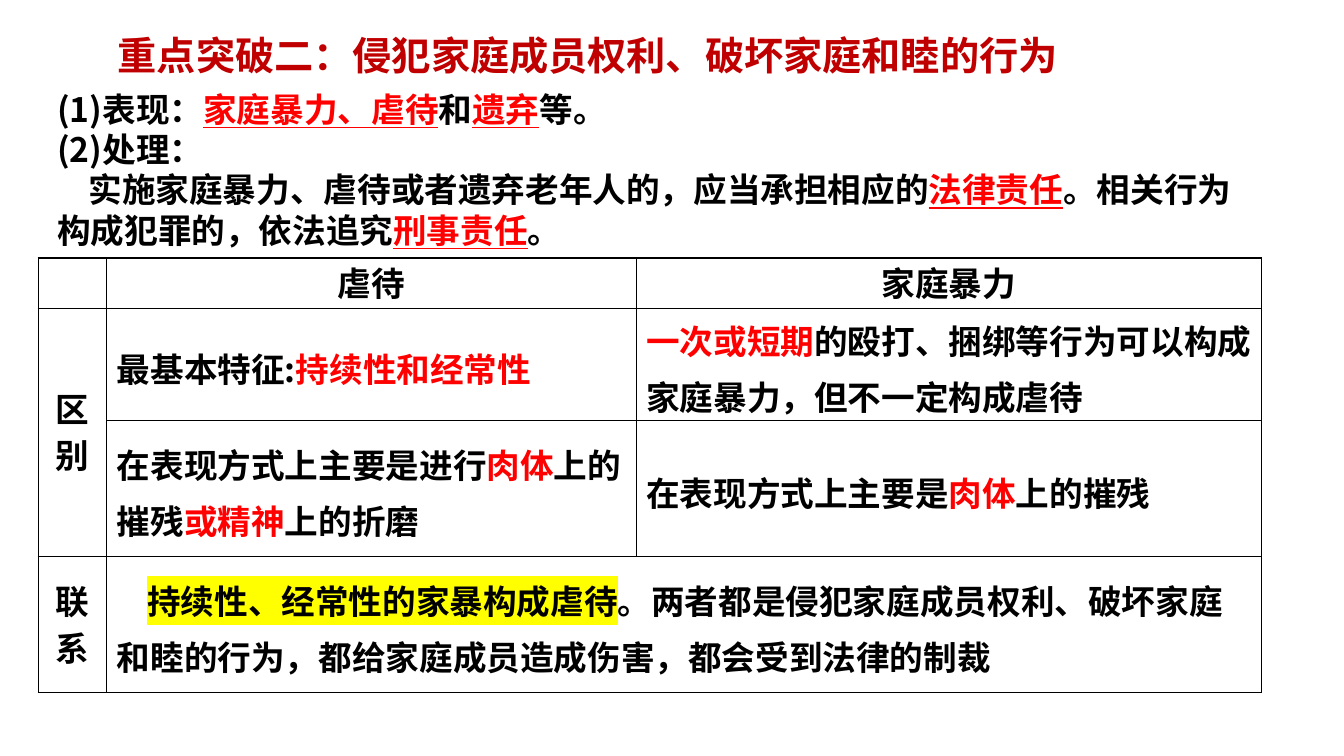
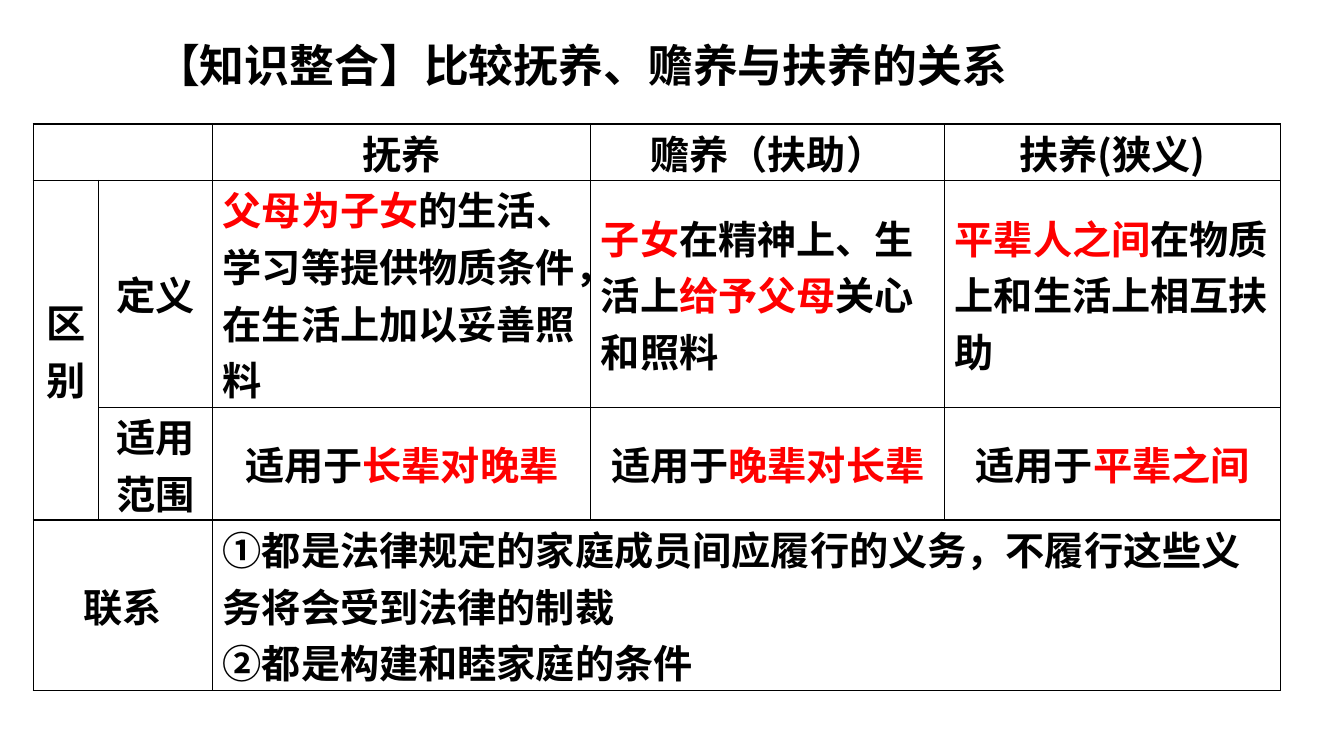
from collections import namedtuple

import pptx
import pptx.dml.color
import pptx.enum.text
import pptx.oxml
import pptx.oxml.ns
import pptx.util

# Shared look
BLACK = pptx.dml.color.RGBColor(0x00, 0x00, 0x00)
WHITE = pptx.dml.color.RGBColor(0xFF, 0xFF, 0xFF)
RED = pptx.dml.color.RGBColor(0xFF, 0x00, 0x00)
DARK_RED = pptx.dml.color.RGBColor(0xC0, 0x00, 0x00)
YELLOW = pptx.dml.color.RGBColor(0xFF, 0xFF, 0x00)
FONT = "Noto Sans CJK SC"
EMU_PER_PX = 9144  # 100 px to the inch
BORDER_PT = 1
LINE_FACTOR = 1.2

LEFT = pptx.enum.text.PP_ALIGN.LEFT
CENTER = pptx.enum.text.PP_ALIGN.CENTER
MIDDLE = pptx.enum.text.MSO_ANCHOR.MIDDLE
TOP = pptx.enum.text.MSO_ANCHOR.TOP

Box = namedtuple("Box", "left top width height")
Span = namedtuple("Span", "text color underline highlight",
                  defaults=(BLACK, False, None))
# spacing in points; margin and indent in px
Layout = namedtuple("Layout", "align spacing margin indent anchor",
                    defaults=(LEFT, None, 0, 0, MIDDLE))
Entry = namedtuple("Entry", "row column layout paragraphs")


def px(length):
    return pptx.util.Emu(length * EMU_PER_PX)


def red(text):
    return Span(text, RED)


def key(text):
    return Span(text, RED, underline=True)


def draw_xml(tag, content):
    return pptx.oxml.parse_xml(
        f'<a:{tag} {pptx.oxml.ns.nsdecls("a")}>{content}</a:{tag}>')


# Text
def write_span(para, span, size):
    run = para.add_run()
    run.text = span.text
    font = run.font
    font.size = pptx.util.Pt(size)
    font.bold = True
    font.underline = span.underline
    font.color.rgb = span.color
    font.name = FONT
    properties = run._r.get_or_add_rPr()
    east_asian = draw_xml("ea", "")
    east_asian.set("typeface", FONT)
    properties.find(pptx.oxml.ns.qn("a:latin")).addnext(east_asian)
    if span.highlight is not None:
        mark = draw_xml("highlight", f'<a:srgbClr val="{span.highlight}"/>')
        properties.find(pptx.oxml.ns.qn("a:solidFill")).addnext(mark)


def write_paragraph(para, spans, size, layout):
    para.alignment = layout.align
    if layout.spacing:
        para.line_spacing = pptx.util.Pt(layout.spacing)
    properties = para._p.get_or_add_pPr()
    properties.set("marL", str(px(layout.margin)))
    properties.set("indent", str(px(layout.indent)))
    for span in spans:
        write_span(para, Span(span) if isinstance(span, str) else span, size)


def add_text(page, box, size, paragraphs, anchor=TOP):
    """paragraphs holds pairs of first-line indent and spans."""
    frame = page.shapes.add_textbox(*map(px, box)).text_frame
    frame.word_wrap = True
    frame.auto_size = pptx.enum.text.MSO_AUTO_SIZE.SHAPE_TO_FIT_TEXT
    frame.vertical_anchor = anchor
    frame.margin_top, frame.margin_bottom = px(4), px(6)
    for index, (indent, spans) in enumerate(paragraphs):
        para = frame.add_paragraph() if index else frame.paragraphs[0]
        layout = Layout(spacing=round(size * LINE_FACTOR, 1), indent=indent)
        write_paragraph(para, spans, size, layout)


def add_title(page, box, size, text, color=BLACK, anchor=TOP):
    add_text(page, box, size, [(0, [Span(text, color)])], anchor)


# Tables
def style_cell(cell, inset):
    cell.margin_left = cell.margin_right = px(inset)
    cell.margin_top = cell.margin_bottom = 0
    cell.vertical_anchor = MIDDLE
    properties = cell._tc.get_or_add_tcPr()
    for side in ("lnL", "lnR", "lnT", "lnB"):
        border = draw_xml(
            side, f'<a:solidFill><a:srgbClr val="{BLACK}"/></a:solidFill>')
        border.set("w", str(pptx.util.Pt(BORDER_PT)))
        properties.append(border)
    cell.fill.solid()
    cell.fill.fore_color.rgb = WHITE


def add_grid(page, left, top, columns, rows, size, inset, merges, entries):
    box = Box(left, top, sum(columns), sum(rows))
    table = page.shapes.add_table(
        len(rows), len(columns), *map(px, box)).table
    table.first_row = table.horz_banding = False
    for column, width in zip(table.columns, columns):
        column.width = px(width)
    for row, height in zip(table.rows, rows):
        row.height = px(height)
    for cell in table.iter_cells():
        style_cell(cell, inset)
    for first, last in merges:
        table.cell(*first).merge(table.cell(*last))
    for entry in entries:
        cell = table.cell(entry.row, entry.column)
        cell.vertical_anchor = entry.layout.anchor
        frame = cell.text_frame
        for index, spans in enumerate(entry.paragraphs):
            para = frame.add_paragraph() if index else frame.paragraphs[0]
            write_paragraph(para, spans, size, entry.layout)


# Slides
def build_family_rights(page):
    add_title(page, Box(107, 27, 1098, 57), 28,
              "重点突破二：侵犯家庭成员权利、破坏家庭和睦的行为", DARK_RED)
    add_text(page, Box(47, 84, 1197, 172), 24, [
        (0, ["(1)表现：", key("家庭暴力、虐待"), "和", key("遗弃"), "等。"]),
        (0, ["(2)处理："]),
        (31, ["实施家庭暴力、虐待或者遗弃老年人的，应当承担相应的",
              key("法律责任"), "。相关行为构成犯罪的，依法追究",
              key("刑事责任"), "。"]),
    ])
    label = Layout(CENTER, 33)
    detail = Layout(LEFT, 40)
    summary = detail._replace(indent=30)
    add_grid(
        page, 38, 256, [68, 525, 620], [50, 110, 135, 135], 24, 10,
        merges=[((1, 0), (2, 0)), ((3, 1), (3, 2))],
        entries=[
            Entry(0, 1, label, [["虐待"]]),
            Entry(0, 2, label, [["家庭暴力"]]),
            Entry(1, 0, label, [["区别"]]),
            Entry(1, 1, detail, [["最基本特征:", red("持续性和经常性")]]),
            Entry(1, 2, detail, [[
                red("一次或短期"),
                "的殴打、捆绑等行为可以构成家庭暴力，但不一定构成虐待"]]),
            Entry(2, 1, detail, [[
                "在表现方式上主要是进行", red("肉体"), "上的摧残",
                red("或精神"), "上的折磨"]]),
            Entry(2, 2, detail, [[
                "在表现方式上主要是", red("肉体"), "上的摧残"]]),
            Entry(3, 0, label, [["联系"]]),
            Entry(3, 1, summary, [[
                Span("持续性、经常性的家暴构成虐待", highlight=YELLOW),
                "。两者都是侵犯家庭成员权利、破坏家庭和睦的行为，"
                "都给家庭成员造成伤害，都会受到法律的制裁"]]),
        ])


def build_support_comparison(page):
    label = Layout(CENTER)
    detail = Layout(LEFT, margin=8)
    add_grid(
        page, 33, 123, [65, 113, 375, 351, 333], [56, 225, 112, 169], 28, 2,
        merges=[((0, 0), (0, 1)), ((1, 0), (2, 0)),
                ((3, 0), (3, 1)), ((3, 2), (3, 4))],
        entries=[
            Entry(0, 2, label, [["抚养"]]),
            Entry(0, 3, label, [["赡养（扶助）"]]),
            Entry(0, 4, label, [["扶养(狭义)"]]),
            Entry(1, 0, label, [["区别"]]),
            Entry(1, 1, label, [["定义"]]),
            Entry(1, 2, detail, [[
                red("父母为子女"),
                "的生活、学习等提供物质条件，在生活上加以妥善照料"]]),
            Entry(1, 3, detail, [[
                red("子女"), "在精神上、生活上", red("给予父母"),
                "关心和照料"]]),
            Entry(1, 4, detail, [[
                red("平辈人之间"), "在物质上和生活上相互扶助"]]),
            Entry(2, 1, label._replace(anchor=TOP), [["适用范围"]]),
            Entry(2, 2, label, [["适用于", red("长辈对晚辈")]]),
            Entry(2, 3, label, [["适用于", red("晚辈对长辈")]]),
            Entry(2, 4, label, [["适用于", red("平辈之间")]]),
            Entry(3, 0, label, [["联系"]]),
            Entry(3, 2, detail, [
                ["①都是法律规定的家庭成员间应履行的义务，"
                 "不履行这些义务将会受到法律的制裁"],
                ["②都是构建和睦家庭的条件"]]),
        ])
    add_title(page, Box(144, 33, 1125, 64), 32,
              "【知识整合】比较抚养、赡养与扶养的关系", anchor=MIDDLE)


def main():
    deck = pptx.Presentation()
    deck.slide_width, deck.slide_height = px(1333), px(750)
    blank = deck.slide_layouts[6]
    for build in (build_family_rights, build_support_comparison):
        build(deck.slides.add_slide(blank))
    deck.save("out.pptx")


if __name__ == "__main__":
    main()
